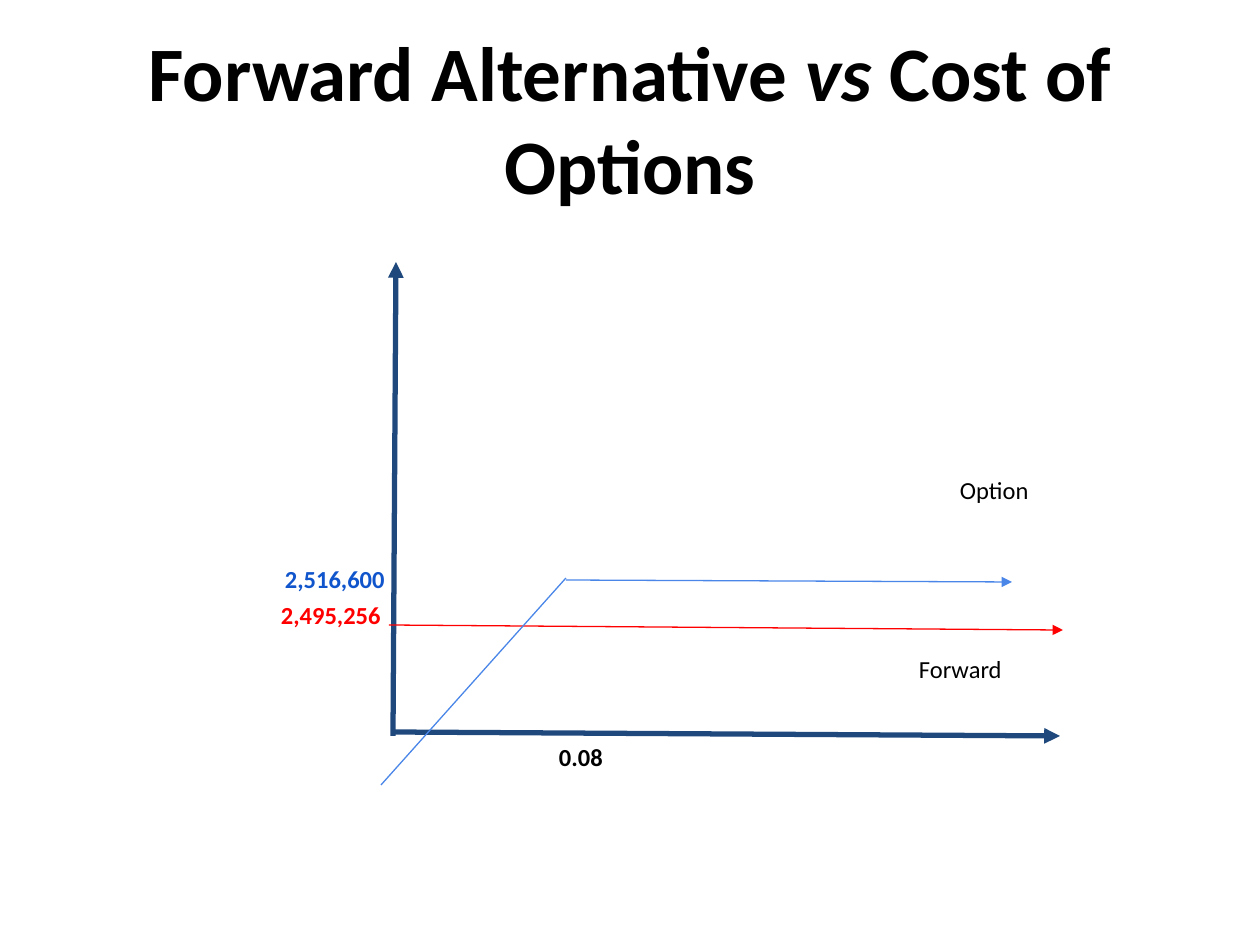
"""Builds the slide comparing the forward alternative with the cost of options."""
from pptx import Presentation
from pptx import util as u
from pptx.dml.color import RGBColor
from pptx.enum import shapes, text
from pptx.oxml.ns import qn
from lxml import etree

PX = 914400 / 126
BLACK = RGBColor(0x00, 0x00, 0x00)
NAVY = RGBColor(0x1F, 0x49, 0x7D)
RED = RGBColor(0xFF, 0x00, 0x00)
SKY = RGBColor(0x4A, 0x86, 0xE8)
BLUE = RGBColor(0x11, 0x55, 0xCC)


def emu(px):
    return u.Emu(round(px * PX))


class Deck:
    def __init__(self, wide, high, font):
        self.prs = Presentation()
        self.prs.slide_width, self.prs.slide_height = emu(wide), emu(high)
        self.slide = self.prs.slides.add_slide(self.prs.slide_layouts[6])
        self.font = font

    def style(self, run, size, color, bold=False, slant=False):
        font = run.font
        font.name, font.size, font.bold, font.italic = self.font, u.Pt(size), bold, slant
        font.color.rgb = color

    def frame(self, *box):
        frame = self.slide.shapes.add_textbox(*map(emu, box)).text_frame
        frame.word_wrap = True
        return frame

    def title(self, box, parts):
        frame = self.frame(*box)
        frame.vertical_anchor = text.MSO_ANCHOR.MIDDLE
        para = frame.paragraphs[0]
        para.alignment = text.PP_ALIGN.CENTER
        for words, slant in parts:
            run = para.add_run()
            run.text = words
            self.style(run, 44, BLACK, True, slant)

    def label(self, words, left, top, color=BLACK, bold=False):
        frame = self.frame(left, top, 126, 30)
        frame.margin_left = frame.margin_right = frame.margin_top = frame.margin_bottom = 0
        frame.text = words
        self.style(frame.paragraphs[0].runs[0], 14, color, bold)

    def line(self, start, end, color, width, arrow=True):
        line = self.slide.shapes.add_connector(
            shapes.MSO_CONNECTOR.STRAIGHT, *map(emu, start + end))
        line.line.color.rgb, line.line.width = color, u.Pt(width)
        if arrow:
            etree.SubElement(line.line._get_or_add_ln(), qn("a:tailEnd"), type="triangle")
        etree.SubElement(line._element.spPr, qn("a:effectLst"))

    def save(self):
        self.prs.save("out.pptx")


def main():
    deck = Deck(1260, 945, "Calibri")
    deck.title((63, 38, 1134, 158),
               [("Forward Alternative ", False), ("vs", True), (" Cost of Options", False)])

    deck.line((393, 736), (396, 262), NAVY, 3)
    deck.line((393, 732), (1060, 736), NAVY, 3)
    deck.line((389, 625), (1063, 630), RED, 0.75)
    deck.line((381, 785), (566, 578), SKY, 0.75, arrow=False)
    deck.line((566, 580), (1012, 582), SKY, 0.75)

    deck.label("2,516,600", 285, 564, BLUE, True)
    deck.label("2,495,256", 281, 600, RED, True)
    deck.label("0.08", 559, 742, bold=True)
    deck.label("Forward", 919, 654)
    deck.label("Option", 960, 475)
    deck.save()


if __name__ == "__main__":
    main()
